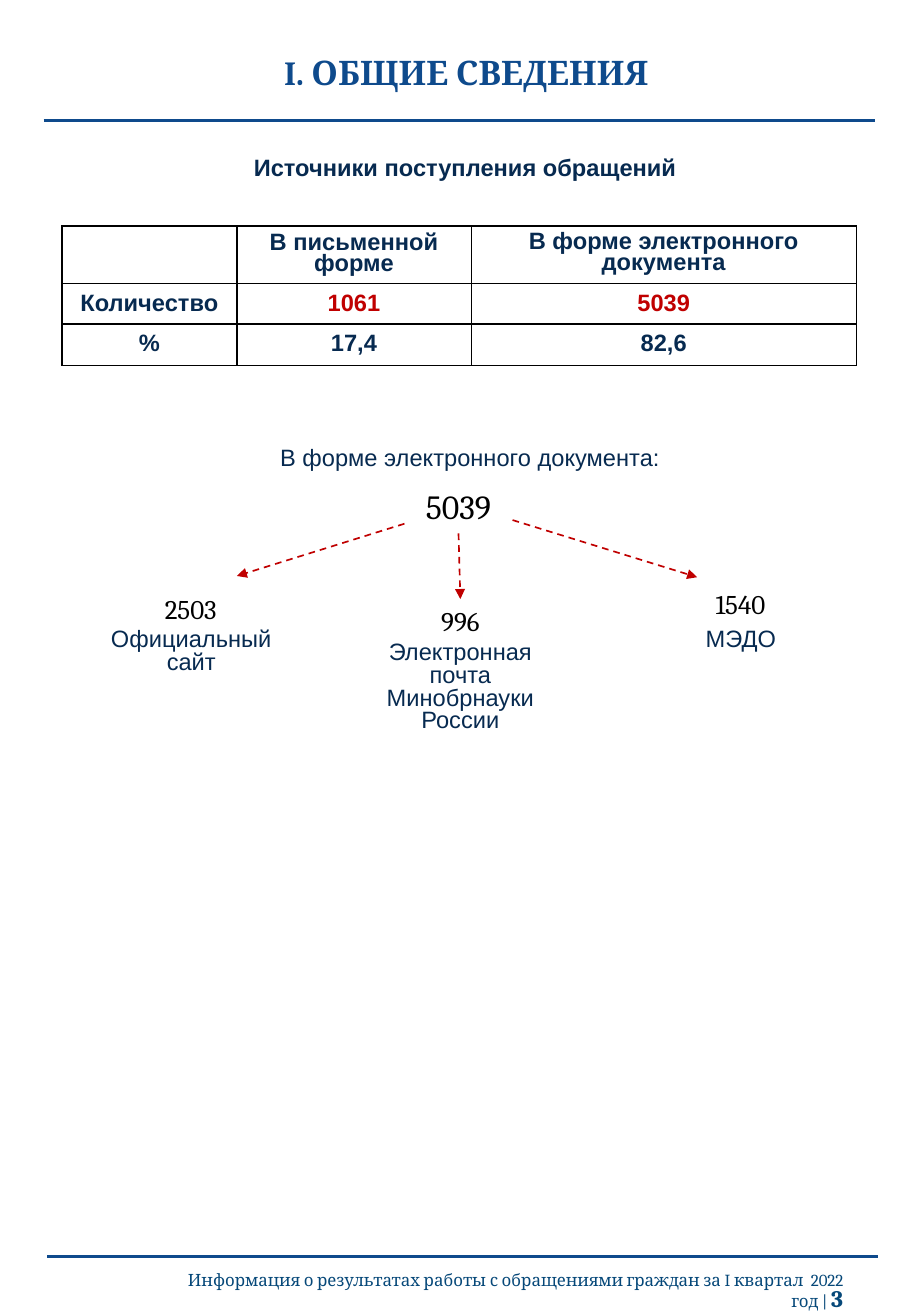
import pptx
import pptx.dml.color
import pptx.enum.dml
import pptx.enum.shapes
import pptx.enum.text
import pptx.oxml
import pptx.oxml.ns
import pptx.util
from pptx.util import Inches

COLORS = {"blue": "0E4A8C", "footer": "064879", "navy": "072A50",
          "red": "C00000", "black": "000000", "white": "FFFFFF"}
ALIGN = pptx.enum.text.PP_ALIGN
ANCHOR = pptx.enum.text.MSO_ANCHOR


def rgb(name):
    return pptx.dml.color.RGBColor.from_string(COLORS[name])


def style_run(span, size, color, font="Arial", bold=False):
    span.font.name = font
    span.font.size = pptx.util.Pt(size)
    span.font.bold = bold
    span.font.color.rgb = rgb(color)


def style_para(para, size, color, font="Arial", bold=False, spacing=1.0,
               align=ALIGN.CENTER):
    para.alignment = align
    para.line_spacing = spacing
    for span in para.runs:
        style_run(span, size, color, font, bold)


def add_text(slide, box, text, size, color, anchor=ANCHOR.TOP, **style):
    shape = slide.shapes.add_textbox(*[Inches(length) for length in box])
    frame = shape.text_frame
    frame.word_wrap = True
    frame.vertical_anchor = anchor
    frame.text = text
    style_para(frame.paragraphs[0], size, color, **style)
    return shape


def add_line(slide, start, end, color, width):
    line = slide.shapes.add_connector(
        pptx.enum.shapes.MSO_CONNECTOR.STRAIGHT,
        *[Inches(length) for length in (*start, *end)])
    line.line.color.rgb = rgb(color)
    line.line.width = pptx.util.Pt(width)
    properties = line._element.spPr
    properties.append(properties.makeelement(pptx.oxml.ns.qn("a:effectLst"), {}))
    return line


def add_arrow(slide, start, end):
    arrow = add_line(slide, start, end, "red", 1)
    arrow.line.dash_style = pptx.enum.dml.MSO_LINE.DASH
    outline = arrow.line._get_or_add_ln()
    outline.append(outline.makeelement(
        pptx.oxml.ns.qn("a:tailEnd"), {"type": "triangle"}))
    return arrow


def add_header(slide, box):
    left, top, width, height = box
    add_text(slide, (left, top, width, 0.51), "I. ОБЩИЕ СВЕДЕНИЯ", 20, "blue",
             anchor=ANCHOR.BOTTOM, font="Cambria", bold=True, spacing=0.9)
    line_y = top + height
    add_line(slide, (left + 0.27, line_y), (left + 7.11, line_y), "blue", 1.5)


def add_footer(slide, box):
    left, top, width, height = box
    add_line(slide, (left, top), (left + width, top), "blue", 1.5)
    note = add_text(
        slide, (left + 0.94, top + 0.09, 5.71, height - 0.09),
        "Информация о результатах работы с обращениями граждан "
        "за I квартал  2022 год | ",
        10, "footer", font="Cambria", spacing=0.8, align=ALIGN.RIGHT)
    number = note.text_frame.paragraphs[0].add_run()
    number.text = "3"
    style_run(number, 14, "footer", "Cambria", True)


def draw_borders(cell):
    properties = cell._tc.get_or_add_tcPr()
    for position, side in enumerate(("lnL", "lnR", "lnT", "lnB")):
        properties.insert(position, pptx.oxml.parse_xml(
            f'<a:{side} {pptx.oxml.ns.nsdecls("a")} w="12700"><a:solidFill>'
            f'<a:srgbClr val="{COLORS["black"]}"/></a:solidFill></a:{side}>'))


def add_sources_table(slide, box):
    rows = [["", "В письменной форме", "В форме электронного\vдокумента"],
            ["Количество", "1061", "5039"],
            ["%", "17,4", "82,6"]]
    table = slide.shapes.add_table(
        3, 3, *[Inches(length) for length in box]).table
    for column, width in zip(table.columns, (1.44, 1.93, 3.17)):
        column.width = Inches(width)
    for row, height in zip(table.rows, (0.47, 0.33, 0.34)):
        row.height = Inches(height)
    for row_index, texts in enumerate(rows):
        for column_index, text in enumerate(texts):
            cell = table.cell(row_index, column_index)
            cell.text = text
            cell.fill.solid()
            cell.fill.fore_color.rgb = rgb("white")
            if (row_index, column_index) == (0, 1):
                cell.vertical_anchor = ANCHOR.MIDDLE
            is_count = row_index == 1 and column_index > 0
            style_para(cell.text_frame.paragraphs[0], 14,
                       "red" if is_count else "navy", bold=True,
                       spacing=1.0 if row_index else 0.8)
            draw_borders(cell)


def add_breakdown(slide, box):
    """Splits the electronic total into its three channels."""
    left, top, width, height = box

    def place(x, y, w, h):
        return left + x, top + y, w, h

    def add_number(area, text, size):
        return add_text(slide, place(*area), text, size, "black", font="Cambria")

    add_text(slide, place(0.88, 0, 4.4, 0.48), "В форме электронного документа:",
             14, "navy", spacing=0.8)
    total = add_number((2.57, 0.31, 0.83, 0.44), "5039", 20)

    channels = [
        ("2503", (0.37, 1.19, 0.82, 0.37),
         "Официальный сайт", (0, 1.49, 1.57, 0.48)),
        ("996", (2.63, 1.29, 0.74, 0.37),
         "Электронная почта Минобрнауки России", (2.14, 1.6, 1.72, 0.85)),
        ("1540", (4.95, 1.15, 0.71, 0.37),
         "МЭДО", (4.48, 1.49, 1.66, 0.29)),
    ]
    counts = []
    for count, count_area, label, label_area in channels:
        counts.append(add_number(count_area, count, 16))
        add_text(slide, place(*label_area), label, 14, "navy", spacing=0.8)

    add_arrow(slide, (left + 2.54, top + 0.67), (left + 1.16, top + 1.1))
    add_arrow(slide, (left + 3.43, top + 0.64), (left + 4.95, top + 1.11))
    middle = add_arrow(slide, (left + 2.98, top + 0.75), (left + 3, top + 1.29))
    middle.begin_connect(total, 2)
    middle.end_connect(counts[1], 0)


def main():
    deck = pptx.Presentation()
    deck.slide_width = Inches(7.5)
    deck.slide_height = Inches(10.83)
    slide = deck.slides.add_slide(deck.slide_layouts[6])
    add_header(slide, (0.09, 0.3, 7.5, 0.69))
    add_text(slide, (1.33, 1.25, 5, 0.3), "Источники поступления обращений",
             14, "navy", bold=True, spacing=0.8)
    add_sources_table(slide, (0.51, 1.86, 6.54, 1.14))
    add_breakdown(slide, (0.79, 3.64, 6.14, 2.45))
    add_footer(slide, (0.39, 10.34, 6.84, 0.38))
    deck.save("out.pptx")


if __name__ == "__main__":
    main()
